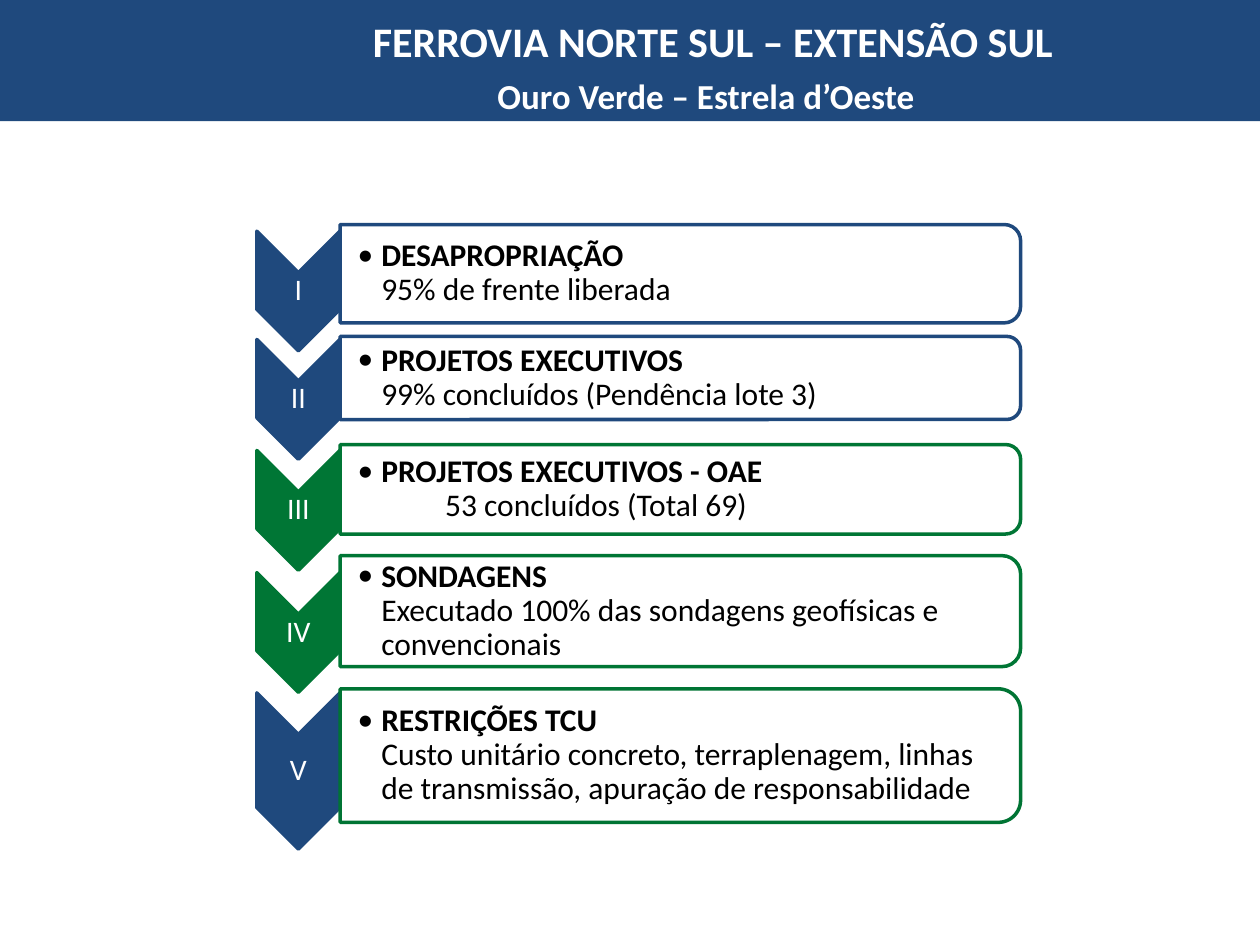
from dataclasses import dataclass

import lxml.etree
import pptx
import pptx.dml.color
import pptx.enum.shapes
import pptx.enum.text
import pptx.oxml.ns
import pptx.util

Pt = pptx.util.Pt
Shape = pptx.enum.shapes.MSO_SHAPE
Align = pptx.enum.text.PP_ALIGN
Anchor = pptx.enum.text.MSO_ANCHOR
qn = pptx.oxml.ns.qn

NAVY, GREEN, WHITE, BLACK = "1F497D", "007635", "FFFFFF", "000000"
FONT = "Calibri"
CHEVRON_CENTER, CHEVRON_WIDTH = 170.5, 47.5
PANEL_LEFT, PANEL_WIDTH = 194.4, 388.8
HANGING = 13.5


@dataclass
class Step:
    numeral: str
    heading: str
    detail: str
    chevron_color: str
    panel_color: str
    chevron_middle: float
    panel_middle: float
    panel_height: float
    chevron_height: float = 68.4
    detail_indent: float = HANGING


STEPS = [
    Step("I", "DESAPROPRIAÇÃO", "95% de frente liberada",
         NAVY, NAVY, 166.3, 156.4, 56.2),
    Step("II", "PROJETOS EXECUTIVOS", "99% concluídos (Pendência lote 3)",
         NAVY, NAVY, 228.2, 216, 47.5),
    Step("III", "PROJETOS EXECUTIVOS - OAE", "53 concluídos (Total 69)",
         GREEN, GREEN, 291.6, 279.6, 51.1, detail_indent=50),
    Step("IV", "SONDAGENS",
         "Executado 100% das sondagens geofísicas e convencionais",
         GREEN, GREEN, 361.4, 349.2, 63.4),
    Step("V", "RESTRIÇÕES TCU",
         "Custo unitário concreto, terraplenagem, linhas de transmissão, "
         "apuração de responsabilidade",
         NAVY, "007434", 440.6, 431.8, 76.3, chevron_height=89.3),
]


def color(value: str) -> pptx.dml.color.RGBColor:
    return pptx.dml.color.RGBColor.from_string(value)


def apply(target, formats: dict) -> None:
    for name, value in formats.items():
        setattr(target, name, value)


def set_frame(box, insets: tuple, anchor):
    left, top, right, bottom = insets
    frame = box.text_frame
    apply(frame, {
        "margin_left": Pt(left), "margin_top": Pt(top),
        "margin_right": Pt(right), "margin_bottom": Pt(bottom),
        "vertical_anchor": anchor, "word_wrap": True,
    })
    return frame


def write(para, text: str, size: float, fill: str, bold: bool = False,
          **layout) -> None:
    span = para.add_run()
    span.text = text
    apply(span.font, {"name": FONT, "size": Pt(size), "bold": bold})
    span.font.color.rgb = color(fill)
    apply(para, layout)


def add_text_box(page, left: float, top: float, width: float, height: float):
    return page.shapes.add_textbox(Pt(left), Pt(top), Pt(width), Pt(height))


def add_filled_shape(page, kind, left: float, top: float, width: float,
                     height: float, fill: str):
    shape = page.shapes.add_shape(kind, Pt(left), Pt(top), Pt(width), Pt(height))
    shape.shadow.inherit = False
    shape.fill.solid()
    shape.fill.fore_color.rgb = color(fill)
    shape.line.fill.background()
    return shape


def add_turned_shape(page, kind, center: float, middle: float, width: float,
                     height: float, fill: str, line: str):
    shape = add_filled_shape(page, kind, center - height / 2, middle - width / 2,
                             height, width, fill)
    shape.rotation = 90
    shape.line.color.rgb = color(line)
    shape.line.width = Pt(2)
    return shape


def set_opacity(shape, percent: int) -> None:
    solid = shape.fill._xPr.find(qn("a:solidFill"))
    lxml.etree.SubElement(solid[0], qn("a:alpha")).set("val", str(percent * 1000))


def indent(para, left: float, first: float = 0, bullet: str = "") -> None:
    properties = para._p.get_or_add_pPr()
    properties.set("marL", str(int(Pt(left))))
    properties.set("indent", str(int(Pt(first))))
    if bullet:
        lxml.etree.SubElement(properties, qn("a:buFont")).set("typeface", FONT)
        lxml.etree.SubElement(properties, qn("a:buChar")).set("char", bullet)


def add_step(page, step: Step) -> None:
    add_turned_shape(page, Shape.CHEVRON, CHEVRON_CENTER, step.chevron_middle,
                     CHEVRON_WIDTH, step.chevron_height,
                     step.chevron_color, step.chevron_color)
    label = add_text_box(page, CHEVRON_CENTER - CHEVRON_WIDTH / 2,
                         step.chevron_middle - 10, CHEVRON_WIDTH, 20)
    frame = set_frame(label, (0.8, 0.8, 0.8, 0.8), Anchor.MIDDLE)
    write(frame.paragraphs[0], step.numeral, 17, WHITE,
          alignment=Align.CENTER, line_spacing=0.9)

    panel = add_turned_shape(page, Shape.ROUND_2_SAME_RECTANGLE,
                             PANEL_LEFT + PANEL_WIDTH / 2, step.panel_middle,
                             PANEL_WIDTH, step.panel_height,
                             WHITE, step.panel_color)
    set_opacity(panel, 90)
    body = add_text_box(page, PANEL_LEFT, step.panel_middle - step.panel_height / 2,
                        PANEL_WIDTH - 6, step.panel_height)
    frame = set_frame(body, (10, 0.8, 0.8, 0.8), Anchor.MIDDLE)
    heading, detail = frame.paragraphs[0], frame.add_paragraph()
    write(heading, step.heading, 18, BLACK, True, line_spacing=0.9)
    indent(heading, HANGING, -HANGING, "•")
    write(detail, step.detail, 18, BLACK, line_spacing=0.9)
    indent(detail, step.detail_indent)


def add_header(page) -> None:
    header = add_filled_shape(page, Shape.RECTANGLE, 0, -2, 720, 71.3, NAVY)
    frame = set_frame(header, (94, 10.8, 7.2, 0), Anchor.TOP)
    title, subtitle = frame.paragraphs[0], frame.add_paragraph()
    write(title, "FERROVIA NORTE SUL – EXTENSÃO SUL", 24, WHITE, True,
          alignment=Align.CENTER)
    indent(title, 8)
    write(subtitle, "Ouro Verde – Estrela d’Oeste", 20, WHITE, True,
          alignment=Align.CENTER, space_before=Pt(5))


def main() -> None:
    deck = pptx.Presentation()
    apply(deck, {"slide_width": Pt(720), "slide_height": Pt(540)})
    page = deck.slides.add_slide(deck.slide_layouts[6])
    add_header(page)
    for step in STEPS:
        add_step(page, step)
    deck.save("out.pptx")


if __name__ == "__main__":
    main()
